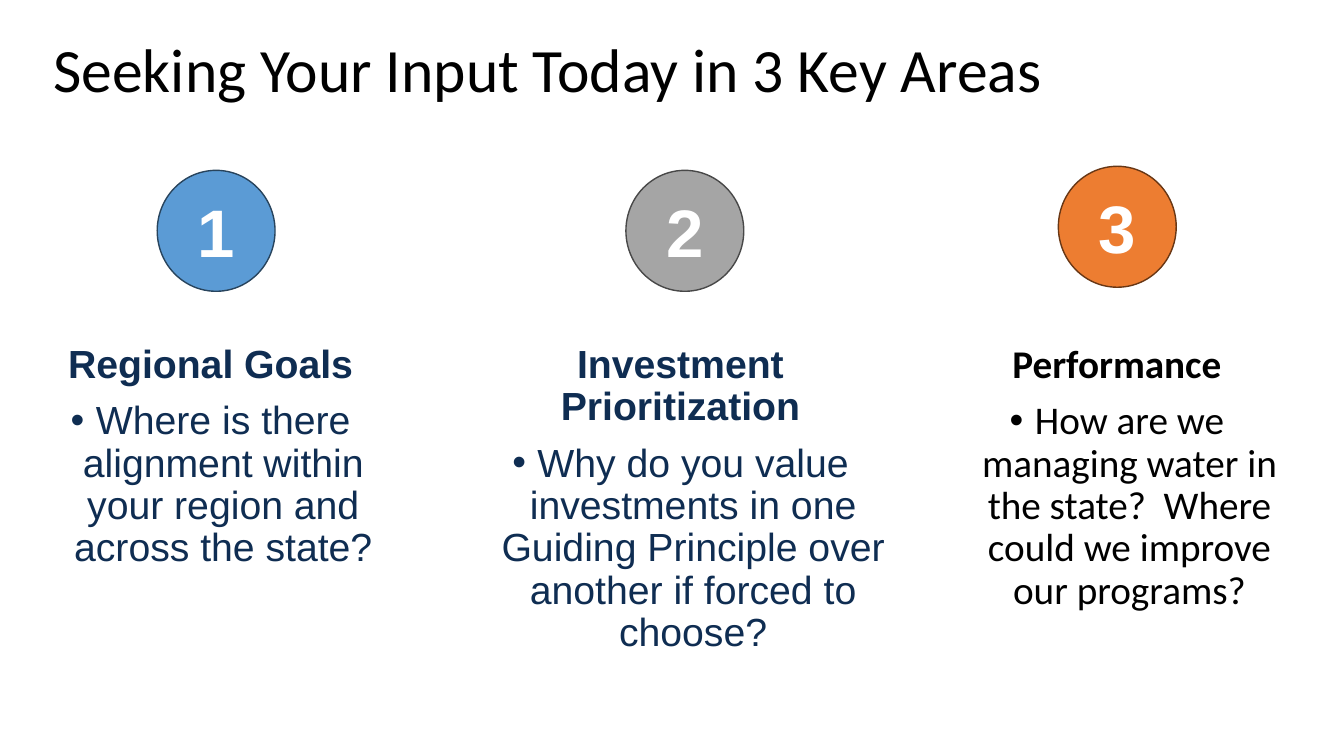
"""Build the slide that asks for input in three key areas."""
from lxml.etree import SubElement
from pptx import Presentation
from pptx.dml.color import RGBColor
from pptx.enum.shapes import MSO_SHAPE as Shape
from pptx.enum.text import MSO_ANCHOR as Anchor, MSO_AUTO_SIZE as AutoSize, PP_ALIGN as Align
from pptx.oxml.ns import qn
from pptx.util import Pt

BLACK = RGBColor(0x00, 0x00, 0x00)
WHITE = RGBColor(0xFF, 0xFF, 0xFF)
NAVY = RGBColor(0x0F, 0x2D, 0x52)
BLUE = RGBColor(0x5B, 0x9B, 0xD5)
BLUE_EDGE = RGBColor(0x28, 0x44, 0x5D)
GRAY = RGBColor(0xA5, 0xA5, 0xA5)
GRAY_EDGE = RGBColor(0x48, 0x48, 0x48)
ORANGE = RGBColor(0xED, 0x7D, 0x31)
ORANGE_EDGE = RGBColor(0x68, 0x37, 0x15)


class AreaSlide:
    line_spacing = 0.9
    text_size = 28
    column_top, column_height = 242.6, 386
    circle_width, circle_height = 84.2, 86.4

    def __init__(self, deck):
        self.page = deck.slides.add_slide(deck.slide_layouts[1])

    def place(self, box, left, top, width, height):
        box.left, box.top, box.width, box.height = map(Pt, (left, top, width, height))

    def style(self, para, face, size, color, bold=False):
        font = para.font
        font.name, font.size, font.bold = face, Pt(size), bold
        font.color.rgb = color

    def indent(self, para, points, bullet=None):
        props = para._p.get_or_add_pPr()
        props.set("marL", str(Pt(points)))
        props.set("indent", str(-Pt(points)))
        if bullet:
            SubElement(props, qn("a:buFont")).set("typeface", "Arial")
            SubElement(props, qn("a:buChar")).set("char", bullet)
        else:
            SubElement(props, qn("a:buNone"))

    def title(self, text):
        box = self.page.shapes.title
        self.place(box, 31, 20.9, 915.8, 61.2)
        frame = box.text_frame
        frame.auto_size = AutoSize.NONE
        frame.vertical_anchor = Anchor.MIDDLE
        frame.text = text
        para = frame.paragraphs[0]
        para.alignment, para.line_spacing = Align.LEFT, self.line_spacing
        self.style(para, "Calibri", 44, BLACK)

    def column(self, box, left, width, heading, question, face, color):
        self.place(box, left, self.column_top, width, self.column_height)
        frame = box.text_frame
        frame.word_wrap, frame.auto_size = True, AutoSize.NONE
        frame.text = f"{heading}\n{question}"
        first, second = frame.paragraphs
        self.indent(first, 0)
        self.indent(second, 18, "•")
        for para, gap in ((first, 0), (second, 10)):
            para.alignment, para.line_spacing = Align.CENTER, self.line_spacing
            para.space_before = Pt(gap)
            self.style(para, face, self.text_size, color, bold=para is first)

    def body_column(self, *details):
        self.column(self.page.placeholders[1], *details)

    def text_column(self, *details):
        self.column(self.page.shapes.add_textbox(0, 0, 0, 0), *details)

    def circle(self, number, left, top, fill, edge):
        box = self.page.shapes.add_shape(Shape.OVAL, 0, 0, 0, 0)
        self.place(box, left, top, self.circle_width, self.circle_height)
        box.shadow.inherit = False
        box.fill.solid()
        box.fill.fore_color.rgb = fill
        box.line.color.rgb = edge
        box.line.width = Pt(1)
        frame = box.text_frame
        frame.vertical_anchor = Anchor.MIDDLE
        frame.text = number
        para = frame.paragraphs[0]
        para.alignment = Align.CENTER
        self.style(para, "Arial", 48, WHITE, bold=True)


def main():
    deck = Presentation()
    deck.slide_width, deck.slide_height = Pt(960), Pt(540)
    slide = AreaSlide(deck)
    slide.title("Seeking Your Input Today in 3 Key Areas")
    slide.text_column(15.8, 269.3, "Regional Goals",
                      "Where is there alignment within your region and across the state?",
                      "Arial", NAVY)
    slide.text_column(322.6, 326.9, "Investment Prioritization",
                      "Why do you value investments in one Guiding Principle over "
                      "another if forced to choose?", "Arial", NAVY)
    slide.body_column(663.1, 269.3, "Performance",
                      "How are we managing water in the state?  Where could we improve "
                      "our programs?", "Calibri", BLACK)
    slide.circle("1", 112.3, 121.7, BLUE, BLUE_EDGE)
    slide.circle("2", 447.1, 121.7, GRAY, GRAY_EDGE)
    slide.circle("3", 756, 118.8, ORANGE, ORANGE_EDGE)
    deck.save("out.pptx")


if __name__ == "__main__":
    main()
